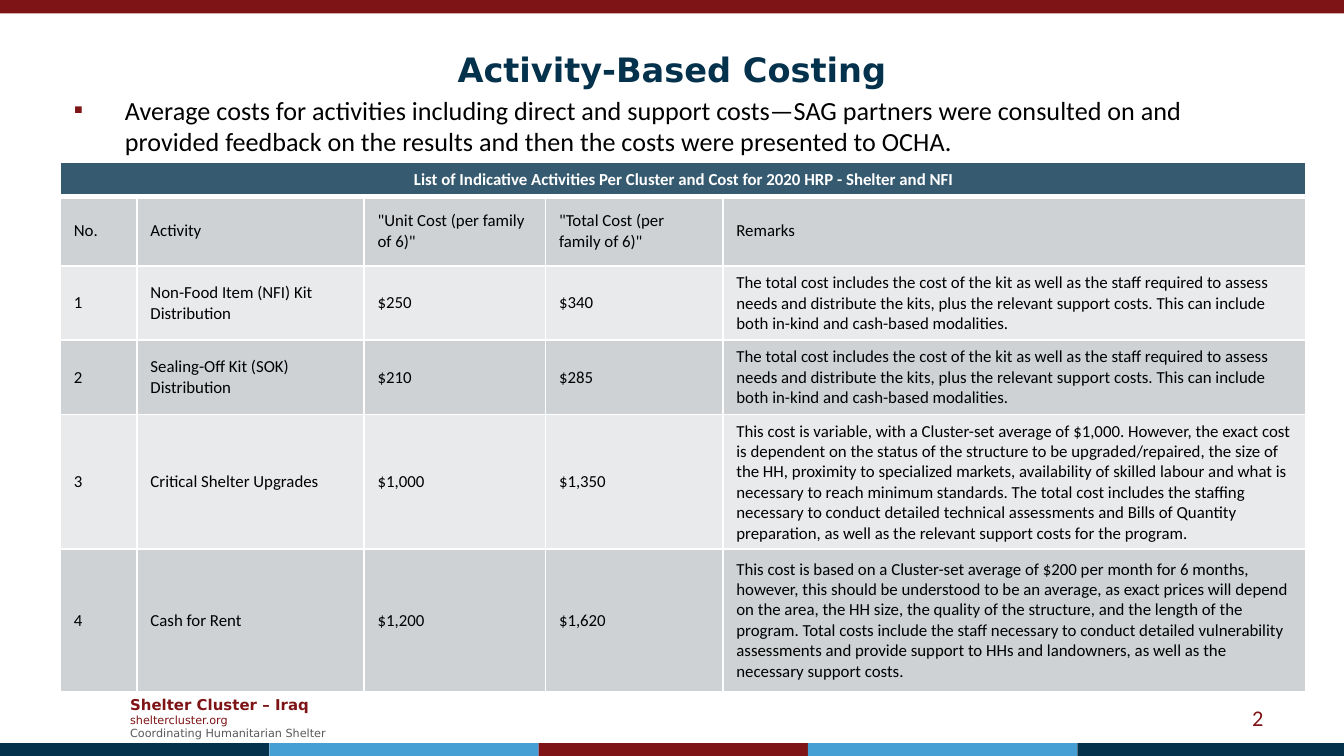
import pptx
import pptx.util
import pptx.dml.color
import pptx.enum.shapes
import pptx.enum.text
import pptx.oxml
import pptx.oxml.ns
from pptx.util import Inches

ALIGN = pptx.enum.text.PP_ALIGN
MIDDLE = pptx.enum.text.MSO_ANCHOR.MIDDLE
NAVY, BLUE, RED, GREY = "04314C", "459FD5", "7F1416", "595959"
BLACK, WHITE = "000000", "FFFFFF"
HEADER_FILL, ROW_FILLS = "365A70", ("CED2D5", "E8EAEB")
HEADING, BODY = "DejaVu Sans", "Calibri"

TABLE_TITLE = "List of Indicative Activities Per Cluster and Cost for 2020 HRP - Shelter and NFI"
KIT_REMARK = (
    "The total cost includes the cost of the kit as well as the staff required to assess needs "
    "and distribute the kits, plus the relevant support costs. This can include both in-kind "
    "and cash-based modalities.")
UPGRADE_REMARK = (
    "This cost is variable, with a Cluster-set average of $1,000. However, the exact cost is "
    "dependent on the status of the structure to be upgraded/repaired, the size of the HH, "
    "proximity to specialized markets, availability of skilled labour and what is necessary to "
    "reach minimum standards. The total cost includes the staffing necessary to conduct detailed "
    "technical assessments and Bills of Quantity preparation, as well as the relevant support "
    "costs for the program.")
RENT_REMARK = (
    "This cost is based on a Cluster-set average of $200 per month for 6 months, however, this "
    "should be understood to be an average, as exact prices will depend on the area, the HH size, "
    "the quality of the structure, and the length of the program. Total costs include the staff "
    "necessary to conduct detailed vulnerability assessments and provide support to HHs and "
    "landowners, as well as the necessary support costs.")
ROWS = [
    ("No.", "Activity", '"Unit Cost (per family of 6)"', '"Total Cost (per family of 6)"', "Remarks"),
    ("1", "Non-Food Item (NFI) Kit Distribution", "$250", "$340", KIT_REMARK),
    ("2", "Sealing-Off Kit (SOK) Distribution", "$210", "$285", KIT_REMARK),
    ("3", "Critical Shelter Upgrades", "$1,000", "$1,350", UPGRADE_REMARK),
    ("4", "Cash for Rent", "$1,200", "$1,620", RENT_REMARK),
]
COL_WIDTHS = (0.57, 1.69, 1.35, 1.32, 4.34)
ROW_HEIGHTS = (0.24, 0.52, 0.49, 0.49, 0.87, 1.06)


def rgb(color):
    return pptx.dml.color.RGBColor.from_string(color)


def add_run(p, text, size, color, font=BODY, bold=False):
    r = p.add_run()
    r.text = text
    r.font.size = pptx.util.Pt(size)
    r.font.name = font
    r.font.bold = bold
    r.font.color.rgb = rgb(color)


def place(sp, left, top, width, height):
    sp.left, sp.top = Inches(left), Inches(top)
    sp.width, sp.height = Inches(width), Inches(height)


def add_bar(slide, left, top, width, color):
    sp = slide.shapes.add_shape(pptx.enum.shapes.MSO_SHAPE.RECTANGLE, Inches(left),
                                Inches(top), Inches(width), Inches(0.1))
    sp.shadow.inherit = False
    sp.fill.solid()
    sp.fill.fore_color.rgb = rgb(color)
    sp.line.fill.background()


def add_text_box(slide, left, top, width, height):
    sp = slide.shapes.add_textbox(Inches(left), Inches(top), Inches(width), Inches(height))
    tf = sp.text_frame
    tf.word_wrap = True
    tf.vertical_anchor = MIDDLE
    return tf


def add_bullet(p, char, color, indent):
    pPr = p._p.get_or_add_pPr()
    pPr.set("marL", str(Inches(indent)))
    pPr.set("indent", str(-Inches(indent)))
    ns = pptx.oxml.ns.nsdecls("a")
    for xml in (f'<a:buClr {ns}><a:srgbClr val="{color}"/></a:buClr>',
                f'<a:buFont {ns} typeface="{BODY}"/>',
                f'<a:buChar {ns} char="{char}"/>'):
        pPr.append(pptx.oxml.parse_xml(xml))


def set_borders(cell, top=1, bottom=1):
    tcPr = cell._tc.get_or_add_tcPr()
    ns = pptx.oxml.ns.nsdecls("a")
    for side, width in (("L", 1), ("R", 1), ("T", top), ("B", bottom)):
        tcPr.append(pptx.oxml.parse_xml(
            f'<a:ln{side} {ns} w="{pptx.util.Pt(width)}"><a:solidFill>'
            f'<a:srgbClr val="{WHITE}"/></a:solidFill></a:ln{side}>'))


def fill_cell(cell, color):
    cell.fill.solid()
    cell.fill.fore_color.rgb = rgb(color)
    cell.vertical_anchor = MIDDLE


def add_cost_table(slide):
    frame = slide.shapes.add_table(len(ROW_HEIGHTS), len(COL_WIDTHS), Inches(0.45), Inches(1.21),
                                   Inches(sum(COL_WIDTHS)), Inches(sum(ROW_HEIGHTS)))
    table = frame.table
    for col, width in zip(table.columns, COL_WIDTHS):
        col.width = Inches(width)
    for row, height in zip(table.rows, ROW_HEIGHTS):
        row.height = Inches(height)

    # Heading across all columns
    for cell in table.rows[0].cells:
        set_borders(cell, bottom=3)
        fill_cell(cell, HEADER_FILL)
    heading = table.cell(0, 0)
    heading.merge(table.cell(0, len(COL_WIDTHS) - 1))
    p = heading.text_frame.paragraphs[0]
    p.alignment = ALIGN.CENTER
    add_run(p, TABLE_TITLE, 9, WHITE, bold=True)

    # Column names and activities
    for i, values in enumerate(ROWS):
        for j, value in enumerate(values):
            cell = table.cell(i + 1, j)
            set_borders(cell, top=3 if i == 0 else 1)
            fill_cell(cell, ROW_FILLS[i % 2])
            add_run(cell.text_frame.paragraphs[0], value, 9, BLACK)


def add_title(slide, text):
    sp = slide.shapes.title
    place(sp, 0.5, 0.23, 9, 0.57)
    tf = sp.text_frame
    tf.auto_size = pptx.enum.text.MSO_AUTO_SIZE.NONE
    tf.vertical_anchor = MIDDLE
    p = tf.paragraphs[0]
    p.alignment = ALIGN.CENTER
    add_run(p, text, 18, NAVY, HEADING, True)


def add_body(slide, text):
    sp = slide.placeholders[1]
    place(sp, 0.45, 0.65, 9, 4.27)
    tf = sp.text_frame
    tf.auto_size = pptx.enum.text.MSO_AUTO_SIZE.NONE
    p = tf.paragraphs[0]
    p.space_before = pptx.util.Pt(0)
    add_bullet(p, "▪", RED, 0.38)
    add_run(p, text, 14, BLACK)


def add_footer(slide):
    tf = add_text_box(slide, 0.87, 5.12, 1.73, 0.44)
    lines = (("Shelter Cluster – Iraq", 8, RED, True),
             ("sheltercluster.org", 6, RED, False),
             ("Coordinating Humanitarian Shelter", 6, GREY, False))
    for i, (text, size, color, bold) in enumerate(lines):
        p = tf.add_paragraph() if i else tf.paragraphs[0]
        add_run(p, text, size, color, HEADING, bold)

    # Slide number
    p = add_text_box(slide, 7.17, 5.19, 2.33, 0.3).paragraphs[0]
    p.alignment = ALIGN.RIGHT
    add_run(p, "2", 12, RED)


def main():
    prs = pptx.Presentation()
    # Widescreen, 16:9
    prs.slide_width, prs.slide_height = Inches(10), Inches(10 * 9 / 16)
    slide = prs.slides.add_slide(prs.slide_layouts[1])

    # Coloured bars along the top and bottom edges
    add_bar(slide, 0, 0, 10, RED)
    strip = (NAVY, BLUE, RED, BLUE, NAVY)
    width = 10.02 / len(strip)
    for i, color in enumerate(strip):
        add_bar(slide, i * width, 5.53, width, color)

    add_title(slide, "Activity-Based Costing")
    add_body(slide, "Average costs for activities including direct and support costs—SAG partners "
                    "were consulted on and provided feedback on the results and then the costs "
                    "were presented to OCHA.")
    add_footer(slide)
    add_cost_table(slide)
    prs.save("out.pptx")


if __name__ == "__main__":
    main()
